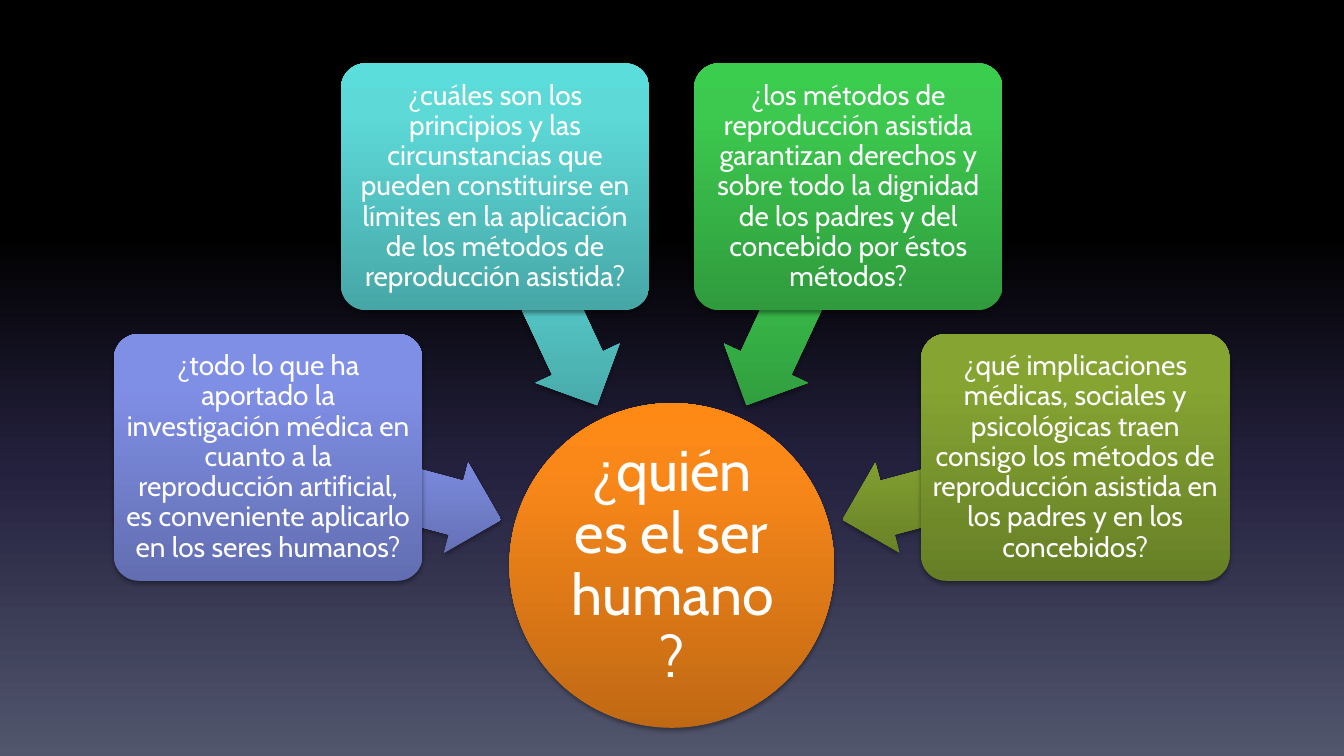
from math import cos, radians, sin

from lxml.etree import SubElement
from pptx import Presentation
from pptx.dml.color import RGBColor
from pptx.enum.shapes import MSO_SHAPE
from pptx.enum.text import MSO_ANCHOR, PP_ALIGN
from pptx.oxml.ns import qn
from pptx.util import Cm, Pt

FONT = "Cabin"
WHITE = RGBColor(0xFF, 0xFF, 0xFF)
BLACK = RGBColor(0x00, 0x00, 0x00)
NIGHT = RGBColor(0x24, 0x21, 0x3E)
SLATE = RGBColor(0x51, 0x56, 0x6D)
ORANGE = (RGBColor(0xC0, 0x69, 0x14), RGBColor(0xFA, 0x88, 0x19), RGBColor(0xFF, 0x89, 0x15))
VIOLET = (RGBColor(0x62, 0x6E, 0xB1), RGBColor(0x80, 0x8F, 0xE6), RGBColor(0x7E, 0x8E, 0xE9))
TEAL = (RGBColor(0x47, 0xA7, 0xA7), RGBColor(0x5D, 0xD9, 0xD8), RGBColor(0x5B, 0xDD, 0xDC))
GREEN = (RGBColor(0x2F, 0x9B, 0x3D), RGBColor(0x3D, 0xC9, 0x4F), RGBColor(0x3A, 0xCD, 0x4E))
OLIVE = (RGBColor(0x66, 0x7F, 0x26), RGBColor(0x85, 0xA4, 0x32), RGBColor(0x87, 0xA7, 0x30))

HUB_X, HUB_Y = 16.93, 14.25
HUB_DIAMETER = 8.18
CARD_SIZE = (7.77, 6.22)
ARROW_SIZE = (6.07, 2.34)
ARROW_RADIUS = 7.49
CARD_RADIUS = 10.53
FIRST_ANGLE, ANGLE_STEP = 195, 50

HUB_QUESTION = "¿quién es el ser humano?"
QUESTIONS = [
    ("¿todo lo que ha aportado la investigación médica en cuanto a la reproducción "
     "artificial, es conveniente aplicarlo en los seres humanos?", VIOLET),
    ("¿cuáles son los principios y las circunstancias que pueden constituirse en límites "
     "en la aplicación de los métodos de reproducción asistida?", TEAL),
    ("¿los métodos de reproducción asistida garantizan derechos y sobre todo la dignidad "
     "de los padres y del concebido por éstos métodos?", GREEN),
    ("¿qué implicaciones médicas, sociales y psicológicas traen consigo los métodos de "
     "reproducción asistida en los padres y en los concebidos?", OLIVE),
]


def apply_gradient(fill, element, stops, angle):
    fill.gradient()
    fill.gradient_angle = angle
    gradient = element.xpath(".//a:gradFill")[0]
    gradient.set("rotWithShape", "0")
    stop_list = gradient.find(qn("a:gsLst"))
    for stop in list(stop_list):
        stop_list.remove(stop)
    for position, color in stops:
        stop = SubElement(stop_list, qn("a:gs"), pos=str(position * 1000))
        SubElement(stop, qn("a:srgbClr"), val=str(color))


def add_shadow(shape):
    shape.shadow.inherit = False
    effects = shape.element.spPr.find(qn("a:effectLst"))
    shadow = SubElement(effects, qn("a:outerShdw"), blurRad=str(Pt(3.1)),
                        dist=str(Pt(1.8)), dir="5400000", rotWithShape="0")
    color = SubElement(shadow, qn("a:srgbClr"), val=str(BLACK))
    SubElement(color, qn("a:alpha"), val="35000")


def add_centered_shape(slide, kind, center, size, colors):
    (x, y), (width, height) = center, size
    shape = slide.shapes.add_shape(kind, Cm(x - width / 2), Cm(y - height / 2),
                                   Cm(width), Cm(height))
    apply_gradient(shape.fill, shape.element, zip((0, 80, 100), colors), 90)
    shape.line.fill.background()
    add_shadow(shape)
    return shape


def write_text(shape, text, size, inset):
    frame = shape.text_frame
    frame.word_wrap = True
    frame.vertical_anchor = MSO_ANCHOR.MIDDLE
    frame.margin_left = frame.margin_right = Cm(inset)
    frame.margin_top = frame.margin_bottom = Cm(inset)
    paragraph = frame.paragraphs[0]
    paragraph.alignment = PP_ALIGN.CENTER
    paragraph.line_spacing = 0.9
    run = paragraph.add_run()
    run.text = text
    run.font.name = FONT
    run.font.size = Pt(size)
    run.font.color.rgb = WHITE


def around_hub(radius, angle):
    return (HUB_X + radius * cos(radians(angle)), HUB_Y + radius * sin(radians(angle)))


def add_hub(slide):
    hub = add_centered_shape(slide, MSO_SHAPE.OVAL, (HUB_X, HUB_Y),
                             (HUB_DIAMETER, HUB_DIAMETER), ORANGE)
    write_text(hub, HUB_QUESTION, 41, 0.07)


def add_arrow(slide, angle, colors):
    arrow = add_centered_shape(slide, MSO_SHAPE.LEFT_ARROW, around_hub(ARROW_RADIUS, angle),
                               ARROW_SIZE, colors)
    arrow.adjustments[0] = 0.6
    arrow.adjustments[1] = 0.5
    arrow.rotation = angle


def add_card(slide, angle, text, colors):
    card = add_centered_shape(slide, MSO_SHAPE.ROUNDED_RECTANGLE,
                              around_hub(CARD_RADIUS, angle), CARD_SIZE, colors)
    card.adjustments[0] = 0.1
    write_text(card, text, 20, 0.1)


def main():
    presentation = Presentation()
    presentation.slide_width = Cm(33.87)
    presentation.slide_height = Cm(19.05)
    slide = presentation.slides.add_slide(presentation.slide_layouts[6])
    apply_gradient(slide.background.fill, slide.element,
                   [(0, BLACK), (31, BLACK), (62, NIGHT), (100, SLATE)], 270)
    add_hub(slide)
    for index, (text, colors) in enumerate(QUESTIONS):
        angle = FIRST_ANGLE + index * ANGLE_STEP
        add_arrow(slide, angle, colors)
        add_card(slide, angle, text, colors)
    presentation.save("out.pptx")


if __name__ == "__main__":
    main()
